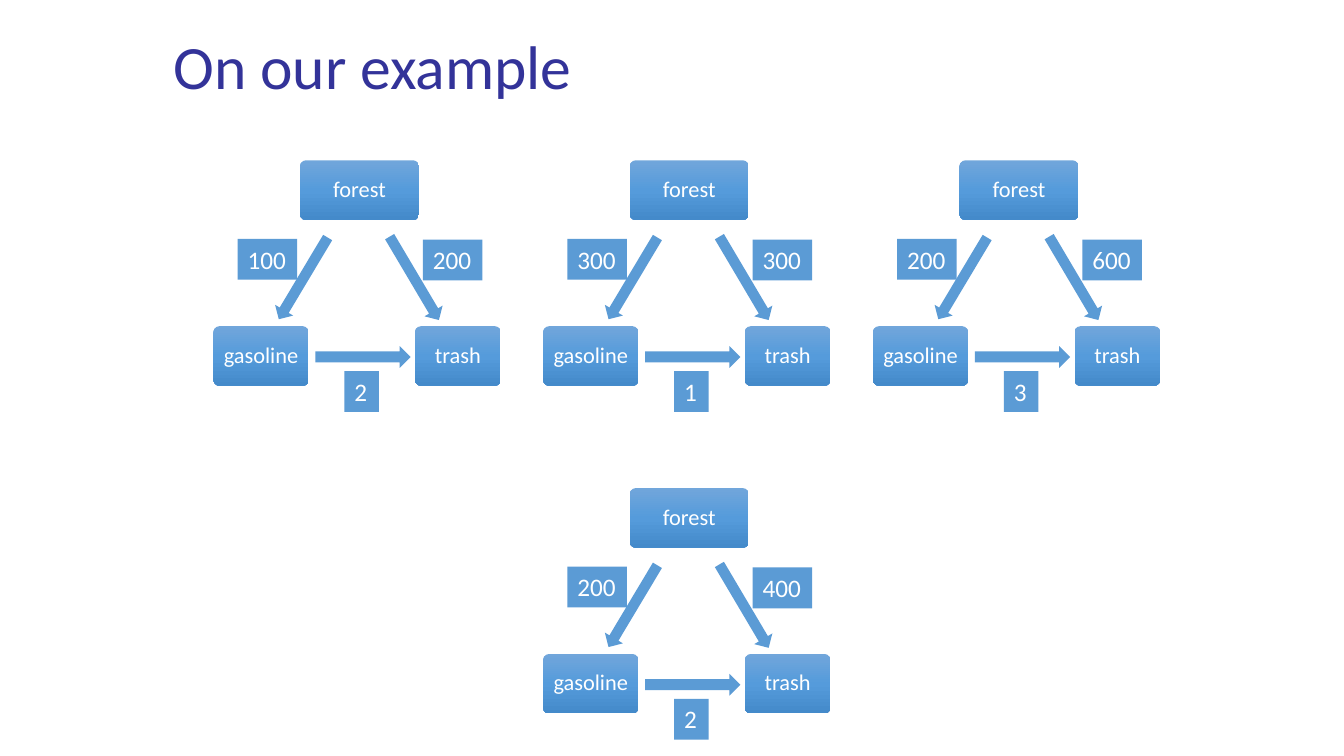
from copy import deepcopy
from dataclasses import dataclass

from pptx import Presentation
from pptx.dml.color import RGBColor
from pptx.enum.shapes import MSO_SHAPE
from pptx.enum.text import MSO_ANCHOR, PP_ALIGN
from pptx.oxml.ns import qn
from pptx.util import Cm, Pt

TITLE = "On our example"

# Column, row, and the costs forest-gasoline, forest-trash, gasoline-trash
TRIANGLES = [
    (0, 0, ("100", "200", "2")),
    (1, 0, ("300", "300", "1")),
    (2, 0, ("200", "600", "3")),
    (1, 1, ("200", "400", "2")),
]

# All lengths in centimetres; boxes are left, top, width, height in a triangle
FIRST_LEFT, FIRST_TOP = 5.38, 4.04
COLUMN_STEP, ROW_STEP = 8.31, 8.26
TITLE_BOX = (4.37, 0.51, 25.4, 2.51)
NODES = {
    "forest": (2.18, 0, 3, 1.5),
    "gasoline": (0, 4.18, 2.4, 1.5),
    "trash": (5.08, 4.18, 2.16, 1.5),
}
ARROWS = [
    ((1.06, 2.71, 2.4, 0.53), 120.9),
    ((3.84, 2.71, 2.44, 0.53), 59.4),
    ((2.57, 4.68, 2.4, 0.55), 0),
]
COST_BOXES = [
    (0.61, 1.98, 1.5, 1.03),
    (5.28, 2, 1.5, 1.03),
    (3.3, 5.31, 0.87, 1.03),
]


@dataclass(frozen=True)
class Theme:
    font: str = "Calibri"
    title_size: int = 44
    node_size: int = 16
    cost_size: int = 18
    title: str = "333399"
    text: str = "FFFFFF"
    fill: str = "5B9BD5"
    gradient: tuple = ("71A6DB", "559BDB", "448ACA")


THEME = Theme()


def write(shape, text, size, color, alignment, anchor):
    frame = shape.text_frame
    frame.vertical_anchor = anchor
    paragraph = frame.paragraphs[0]
    paragraph.text = text
    paragraph.alignment = alignment
    paragraph.font.name = THEME.font
    paragraph.font.size = Pt(size)
    paragraph.font.color.rgb = RGBColor.from_string(color)
    return frame


def set_insets(frame, inset):
    frame.margin_left = frame.margin_right = inset
    frame.margin_top = frame.margin_bottom = inset


def add_plain_shape(group, kind, box, left, top):
    x, y, width, height = box
    shape = group.shapes.add_shape(
        kind, Cm(left + x), Cm(top + y), Cm(width), Cm(height))
    shape.shadow.inherit = False
    shape.line.fill.background()
    shape.fill.solid()
    shape.fill.fore_color.rgb = RGBColor.from_string(THEME.fill)
    return shape


def fill_with_gradient(shape):
    """Fill from top to bottom with the three theme colours."""
    shape.fill.gradient()
    shape.fill.gradient_angle = 270
    stops = shape._element.spPr.find(qn("a:gradFill")).find(qn("a:gsLst"))
    stops.insert(1, deepcopy(stops[0]))
    for index, stop in enumerate(shape.fill.gradient_stops):
        stop.position = index / 2
        stop.color.rgb = RGBColor.from_string(THEME.gradient[index])


def add_triangle(slide, left, top, costs):
    group = slide.shapes.add_group_shape()
    for name, box in NODES.items():
        node = add_plain_shape(group, MSO_SHAPE.ROUNDED_RECTANGLE, box, left, top)
        node.adjustments[0] = 0.1
        fill_with_gradient(node)
        frame = write(node, name, THEME.node_size, THEME.text,
                      PP_ALIGN.CENTER, MSO_ANCHOR.MIDDLE)
        frame.paragraphs[0].line_spacing = 0.9
        frame.word_wrap = False
        set_insets(frame, Cm(0.18))
    for box, rotation in ARROWS:
        arrow = add_plain_shape(group, MSO_SHAPE.RIGHT_ARROW, box, left, top)
        arrow.rotation = rotation
    for cost, box in zip(costs, COST_BOXES):
        label = add_plain_shape(group, MSO_SHAPE.RECTANGLE, box, left, top)
        frame = write(label, cost, THEME.cost_size, THEME.text,
                      PP_ALIGN.LEFT, MSO_ANCHOR.TOP)
        frame.word_wrap = False


def main():
    presentation = Presentation()
    presentation.slide_width, presentation.slide_height = Cm(33.87), Cm(19.05)
    slide = presentation.slides.add_slide(presentation.slide_layouts[6])

    title = slide.shapes.add_textbox(*(Cm(length) for length in TITLE_BOX))
    frame = write(title, TITLE, THEME.title_size, THEME.title,
                  PP_ALIGN.LEFT, MSO_ANCHOR.MIDDLE)
    frame.paragraphs[0].line_spacing = 0.9
    frame.word_wrap = True
    set_insets(frame, 0)

    for column, row, costs in TRIANGLES:
        add_triangle(slide, FIRST_LEFT + column * COLUMN_STEP,
                     FIRST_TOP + row * ROW_STEP, costs)

    presentation.save("out.pptx")


if __name__ == "__main__":
    main()
